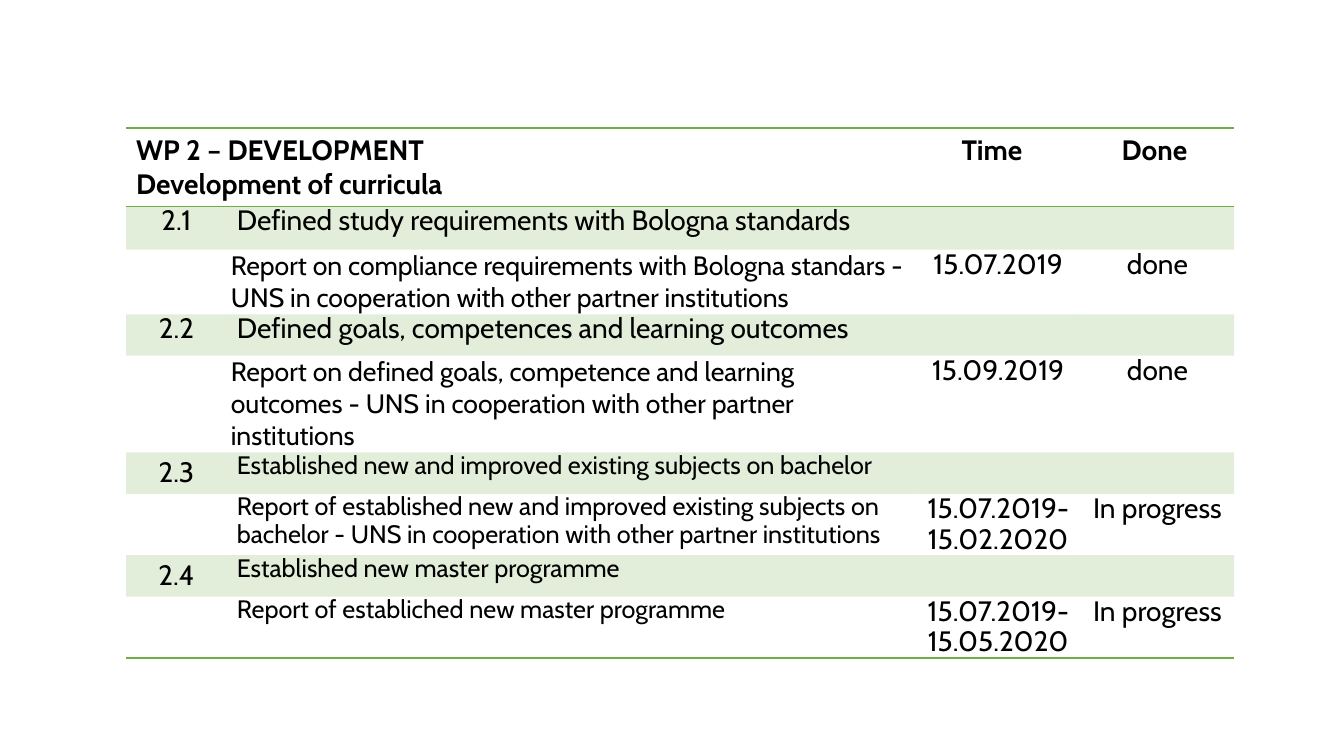
from lxml import etree
from pptx import Presentation
from pptx.dml.color import RGBColor
from pptx.enum.text import MSO_ANCHOR, PP_ALIGN
from pptx.oxml.ns import qn
from pptx.util import Inches, Pt

CENTER, LEFT = PP_ALIGN.CENTER, PP_ALIGN.LEFT
TOP, MIDDLE = MSO_ANCHOR.TOP, MSO_ANCHOR.MIDDLE
GREEN = RGBColor(0x70, 0xAD, 0x47)
BLACK = RGBColor(0, 0, 0)
FONT = "Cabin"
NO_STYLE = "{2D5ABB26-0587-4C30-8999-92F81FD0307C}"

# Content
HEADER = ("WP 2 – DEVELOPMENT\nDevelopment of curricula", "Time ", "Done")
# number, task, report, time, state, task size, report size, number anchor
TASKS = [
    ("2.1", "Defined study requirements with Bologna standards",
     "Report on compliance requirements with Bologna standars - "
     "UNS in cooperation with other partner institutions",
     "15.07.2019", "done", 20, 19, TOP),
    ("2.2", "Defined goals, competences and learning outcomes",
     "Report on defined goals, competence and learning outcomes - "
     "UNS in cooperation with other partner institutions",
     "15.09.2019", "done", 20, 19, TOP),
    ("2.3", "Established new and improved existing subjects on bachelor",
     "Report of established new and improved existing subjects on bachelor - "
     "UNS in cooperation with other partner institutions",
     "15.07.2019-15.02.2020", "In progress", 18, 18, MIDDLE),
    ("2.4", "Established new master programme",
     "Report of establiched new master programme",
     "15.07.2019-15.05.2020", "In progress", 18, 18, MIDDLE),
]
COL_WIDTHS = (1, 6.83, 1.58, 1.58)
ROW_HEIGHTS = (0.76, 0.43) + (0.41,) * (2 * len(TASKS) - 1)
TABLE_HEIGHT = 5.22


def write(cell, text, size=20, align=LEFT, bold=False):
    p = cell.text_frame.paragraphs[0]
    p.text = text
    p.alignment = align
    for r in p.runs:
        for name, value in dict(name=FONT, size=Pt(size), bold=bold).items():
            setattr(r.font, name, value)
        r.font.color.rgb = BLACK
    return p


def write_body(cell, text, size=20, align=LEFT, indent=0.06, spacing=0.9, anchor=TOP):
    margins = dict(margin_left=0.04, margin_right=0.04, margin_top=0, margin_bottom=0)
    for name, value in margins.items():
        setattr(cell, name, Inches(value))
    cell.vertical_anchor = anchor
    p = write(cell, text, size, align)
    p.line_spacing = spacing
    if indent:
        p._p.get_or_add_pPr().set("marL", str(Inches(indent)))


def tint(cell):
    cell.fill.solid()
    cell.fill.fore_color.rgb = GREEN
    color = cell._tc.tcPr.find(".//" + qn("a:srgbClr"))
    etree.SubElement(color, qn("a:alpha"), val="20000")


def border(cell, *sides):
    tcPr = cell._tc.get_or_add_tcPr()
    for i, side in enumerate(sides):
        ln = etree.Element(qn("a:" + side), w=str(Pt(1)))
        fill = etree.SubElement(ln, qn("a:solidFill"))
        etree.SubElement(fill, qn("a:srgbClr"), val=str(GREEN))
        tcPr.insert(i, ln)


prs = Presentation()
prs.slide_width, prs.slide_height = Inches(13.33), Inches(7.5)
s = prs.slides.add_slide(prs.slide_layouts[6])

# Table frame
frame = s.shapes.add_table(len(ROW_HEIGHTS), len(COL_WIDTHS), Inches(1.25), Inches(1.27),
                           Inches(sum(COL_WIDTHS)), Inches(TABLE_HEIGHT))
table = frame.table
table._tbl.tblPr.find(qn("a:tableStyleId")).text = NO_STYLE
table.horz_banding = False
for column, width in zip(table.columns, COL_WIDTHS):
    column.width = Inches(width)
for row, height in zip(table.rows, ROW_HEIGHTS):
    row.height = Inches(height)
frame.height = Inches(TABLE_HEIGHT)

# Header row
table.cell(0, 0).merge(table.cell(0, 1))
for col, text in zip((0, 2, 3), HEADER):
    write(table.cell(0, col), text, align=CENTER if col else LEFT, bold=True)

# Each task: a tinted title row, then a report row
for i, (number, task, report, time, state, task_size, report_size, anchor) in enumerate(TASKS):
    top, below = 2 * i + 1, 2 * i + 2
    write_body(table.cell(top, 0), number, align=CENTER, indent=0, anchor=anchor)
    write_body(table.cell(top, 1), task, task_size)
    loose = report_size == 19
    write_body(table.cell(below, 1), report, report_size,
               indent=0 if loose else 0.06, spacing=1.0 if loose else 0.9)
    for col, text in ((2, time), (3, state)):
        write_body(table.cell(below, col), text, align=CENTER)
    for col in range(len(COL_WIDTHS)):
        tint(table.cell(top, col))

# Rules above and below the header and under the last row
for col in range(len(COL_WIDTHS)):
    border(table.cell(0, col), "lnT", "lnB")
    border(table.cell(len(ROW_HEIGHTS) - 1, col), "lnB")

prs.save("out.pptx")
